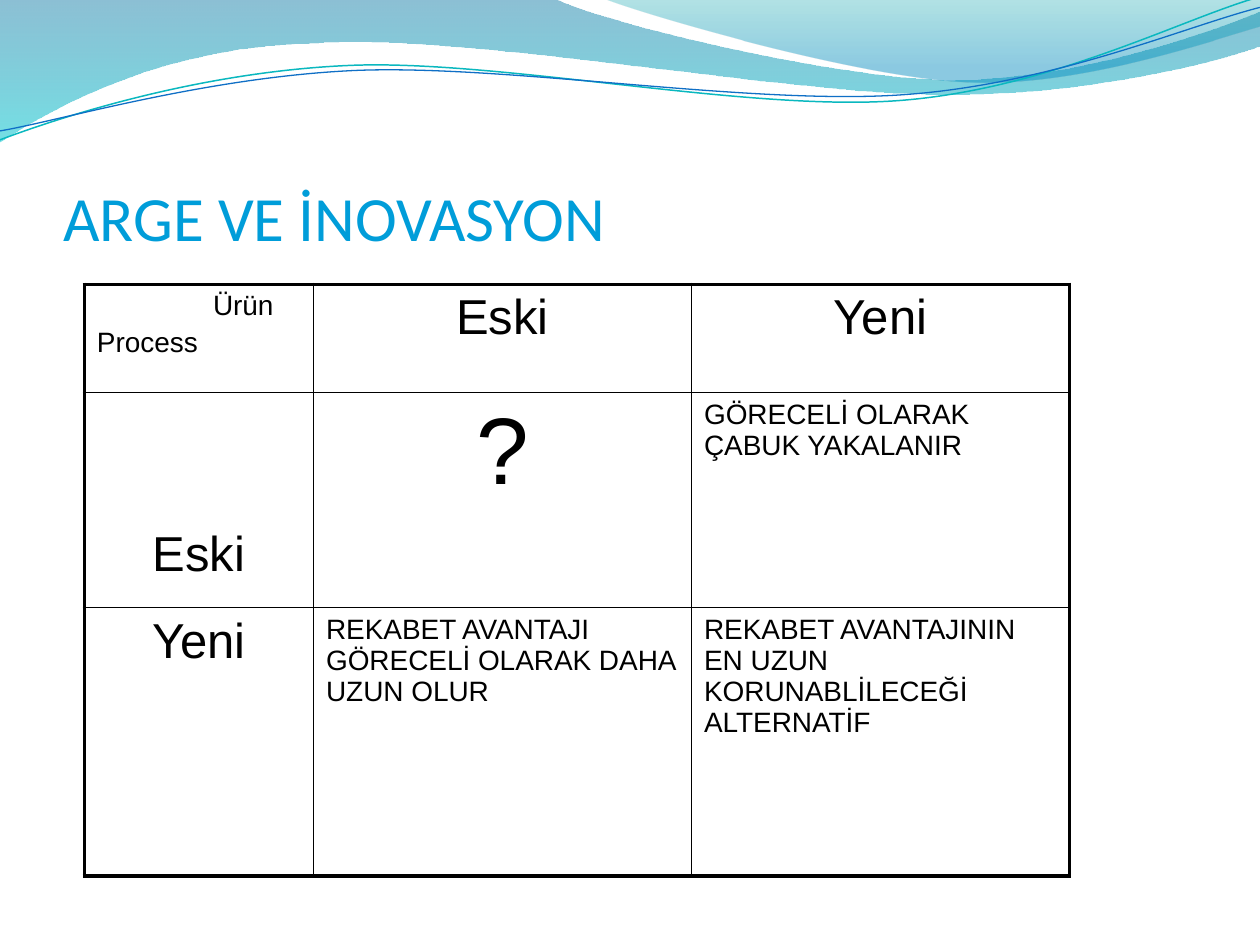
from dataclasses import dataclass

import pptx
import pptx.dml.color
import pptx.enum.text
import pptx.oxml
import pptx.oxml.ns
import pptx.util

Cm, Pt = pptx.util.Cm, pptx.util.Pt
ALIGN = pptx.enum.text.PP_ALIGN
COLORS = {
    "title": "009DD9", "text": "000000", "border": "000000",
    "deep": "0074A1", "aqua": "00C6CF", "teal": "00A1A9", "sky": "008BBF",
    "teal line": "0AB8BF", "blue line": "0F6FC6",
}


@dataclass
class Stop:
    position: float
    color: str
    opacity: int


@dataclass
class Wave:
    """Points in cm; a segment of two numbers is a line, of six a Bézier curve."""
    start: tuple
    segments: list
    stops: tuple = ()
    line: str = ""
    width: float = 0


@dataclass
class Entry:
    lines: tuple
    size: int = 16
    align: ALIGN = ALIGN.LEFT
    top: float = 0.13
    first_indent: float = 0


WAVES = [
    Wave((0, 0), [(11.18, -0.03), (12.09, 0.43, 16.87, 1.6, 19.25, 1.6),
                  (21.67, 1.6, 24.33, 0.66, 25.4, 0.23), (25.43, 0.91),
                  (24.97, 1.12, 22.1, 1.93, 18.95, 1.9),
                  (15.8, 1.9, 9.7, 0.71, 6.53, 0.86),
                  (3.28, 0.91, 1.17, 2.11, -0.03, 2.87), (0, 0)],
         stops=(Stop(0, "deep", 45), Stop(1, "aqua", 55))),
    Wave((12.17, -0.03), [(12.93, 0.28, 17.32, 1.57, 19.53, 1.65),
                          (21.74, 1.75, 24.41, 0.81, 25.4, 0.53), (25.4, 0),
                          (12.17, -0.03)],
         stops=(Stop(0, "teal", 30), Stop(0.8, "sky", 45))),
    Wave((0, 2.82), [(1.22, 2.36, 4.01, 1.45, 7.04, 1.32),
                     (10.03, 1.19, 15.06, 2.26, 18.11, 2.03),
                     (21.16, 1.8, 23.83, 0.38, 25.35, -0.05)],
         line="teal line", width=0.85),
    Wave((0, 2.64), [(1.19, 2.44, 4.17, 1.55, 7.19, 1.42),
                     (10.24, 1.3, 15.16, 2.13, 18.21, 1.91),
                     (21.23, 1.7, 23.9, 0.53, 25.4, 0.15)],
         line="blue line", width=0.75),
]

COLUMN_WIDTHS = (4.62, 7.62, 7.62)
ROW_HEIGHTS = (2.18, 4.34, 5.41)
OLD = Entry(("Eski",), 28, ALIGN.CENTER)
NEW = Entry(("Yeni",), 28, ALIGN.CENTER)
MATRIX = [
    [Entry(("Ürün", "Process"), first_indent=2.34), OLD, NEW],
    [Entry(("Eski",), 28, ALIGN.CENTER, top=2.72), Entry(("?",), 54, ALIGN.CENTER),
     Entry(("GÖRECELİ OLARAK ÇABUK YAKALANIR",))],
    [NEW, Entry(("REKABET AVANTAJI GÖRECELİ OLARAK DAHA UZUN OLUR",)),
     Entry(("REKABET AVANTAJININ EN UZUN KORUNABLİLECEĞİ ALTERNATİF",))],
]


def rgb(name: str) -> pptx.dml.color.RGBColor:
    return pptx.dml.color.RGBColor.from_string(COLORS[name])


def write(frame, lines: tuple, *, size: int, font: str = "Arial", color: str = "text",
          align: ALIGN = ALIGN.LEFT, first_indent: float = 0) -> None:
    frame.word_wrap = True
    for index, line in enumerate(lines):
        paragraph = frame.add_paragraph() if index else frame.paragraphs[0]
        paragraph.alignment = align
        if index:
            paragraph.space_before = Pt(0.2 * size)
        elif first_indent:
            paragraph._p.get_or_add_pPr().set("marL", str(Cm(first_indent)))
        run = paragraph.add_run()
        run.text = line
        run.font.name, run.font.size = font, Pt(size)
        run.font.color.rgb = rgb(color)


def bend(shape, segments: list) -> None:
    """Replace the straight steps of an outline by its Bézier curves."""
    steps = list(shape._element.spPr.iter(pptx.oxml.ns.qn("a:lnTo")))
    for step, segment in zip(steps, segments):
        if len(segment) == 6:
            points = "".join(
                f'<a:pt x="{Cm(x) - shape.left}" y="{Cm(y) - shape.top}"/>'
                for x, y in zip(segment[::2], segment[1::2]))
            step.getparent().replace(step, pptx.oxml.parse_xml(
                f'<a:cubicBezTo {pptx.oxml.ns.nsdecls("a")}>{points}</a:cubicBezTo>'))


def draw_wave(slide, wave: Wave) -> None:
    builder = slide.shapes.build_freeform(*map(Cm, wave.start))
    ends = [(Cm(segment[-2]), Cm(segment[-1])) for segment in wave.segments]
    builder.add_line_segments(ends, close=bool(wave.stops))
    shape = builder.convert_to_shape()
    bend(shape, wave.segments)
    shape.shadow.inherit = False
    if not wave.stops:
        shape.fill.background()
        shape.line.color.rgb = rgb(wave.line)
        shape.line.width = Pt(wave.width)
        return
    shape.line.fill.background()
    shape.fill.gradient()
    shape.fill.gradient_angle = 270
    for target, stop in zip(shape.fill.gradient_stops, wave.stops):
        target.position = stop.position
        target.color.rgb = rgb(stop.color)
    # Opacity of each stop
    tints = shape._element.spPr.iter(pptx.oxml.ns.qn("a:srgbClr"))
    for tint, stop in zip(tints, wave.stops):
        tint.append(pptx.oxml.parse_xml(
            f'<a:alpha {pptx.oxml.ns.nsdecls("a")} val="{stop.opacity * 1000}"/>'))


def set_borders(cell, outer: dict) -> None:
    """Thick on the sides that lie on the table's edge, thin elsewhere."""
    properties = cell._tc.get_or_add_tcPr()
    for index, (side, on_edge) in enumerate(outer.items()):
        width = Pt(2.25 if on_edge else 1)
        properties.insert(index, pptx.oxml.parse_xml(
            f'<a:ln{side} {pptx.oxml.ns.nsdecls("a")} w="{width}"><a:solidFill>'
            f'<a:srgbClr val="{COLORS["border"]}"/></a:solidFill></a:ln{side}>'))


def draw_matrix(slide) -> None:
    last_row, last_column = len(ROW_HEIGHTS) - 1, len(COLUMN_WIDTHS) - 1
    matrix = slide.shapes.add_table(
        last_row + 1, last_column + 1, Cm(1.7), Cm(5.73),
        Cm(sum(COLUMN_WIDTHS)), Cm(sum(ROW_HEIGHTS))).table
    matrix.first_row = matrix.horz_banding = False
    for column, width in zip(matrix.columns, COLUMN_WIDTHS):
        column.width = Cm(width)
    for row, height in zip(matrix.rows, ROW_HEIGHTS):
        row.height = Cm(height)
    for r, entries in enumerate(MATRIX):
        for c, entry in enumerate(entries):
            cell = matrix.cell(r, c)
            cell.fill.background()
            cell.margin_top = Cm(entry.top)
            set_borders(cell, {"L": c == 0, "R": c == last_column,
                               "T": r == 0, "B": r == last_row})
            write(cell.text_frame, entry.lines, size=entry.size, align=entry.align,
                  first_indent=entry.first_indent)


def main() -> None:
    deck = pptx.Presentation()
    deck.slide_width, deck.slide_height = Cm(25.4), Cm(19.05)
    slide = deck.slides.add_slide(deck.slide_layouts[6])

    # Wavy header
    for wave in WAVES:
        draw_wave(slide, wave)

    # Title
    title = slide.shapes.add_textbox(Cm(1.28), Cm(1.95), Cm(22.86), Cm(3.17)).text_frame
    title.margin_left = title.margin_right = title.margin_bottom = 0
    title.vertical_anchor = pptx.enum.text.MSO_ANCHOR.BOTTOM
    write(title, ("ARGE VE İNOVASYON",), size=36, font="Calibri", color="title")

    # Product and process matrix
    draw_matrix(slide)
    deck.save("out.pptx")


if __name__ == "__main__":
    main()
